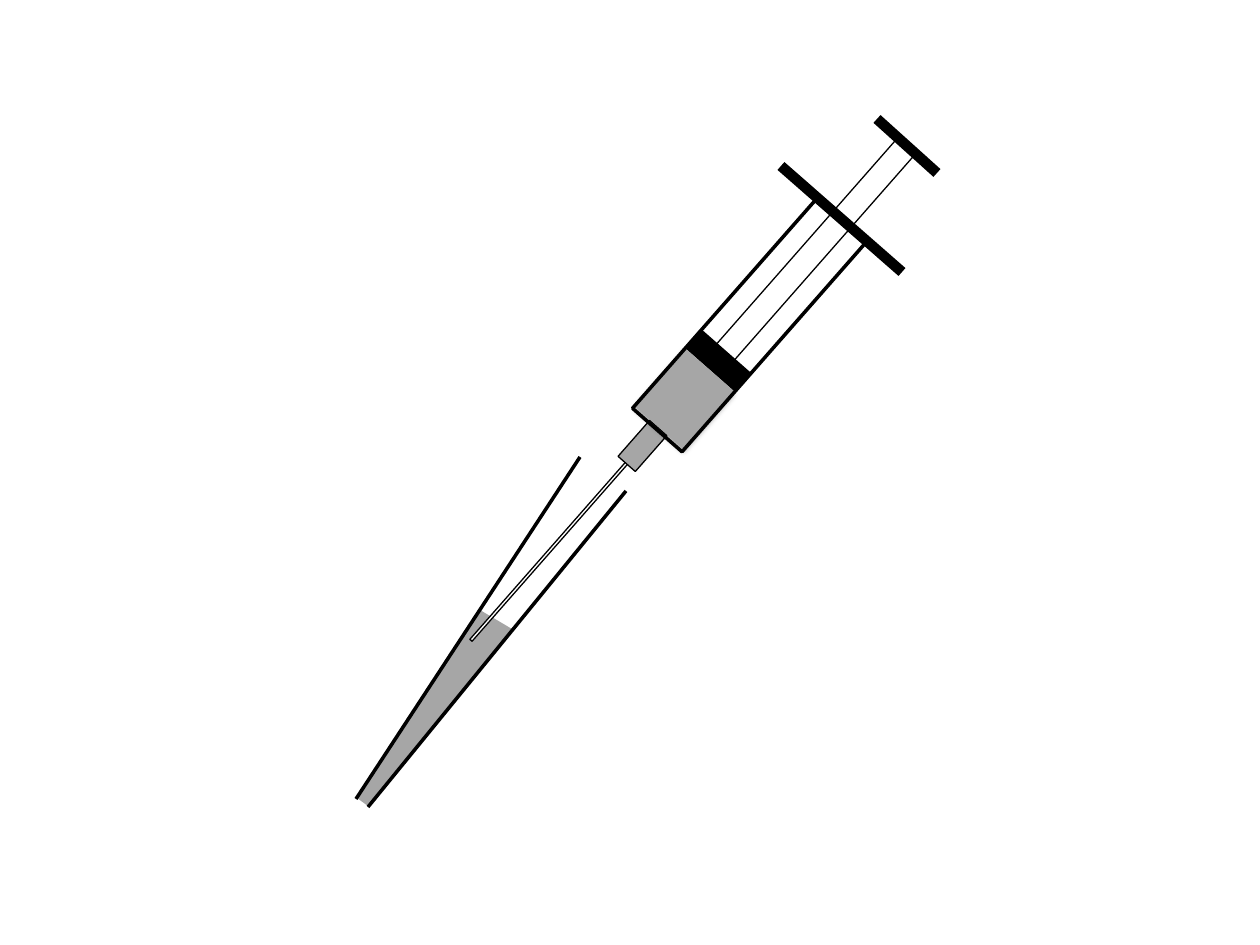
from lxml import etree
from pptx import Presentation
from pptx.dml.color import RGBColor
from pptx.enum.shapes import MSO_CONNECTOR, MSO_SHAPE
from pptx.oxml.ns import qn
from pptx.util import Emu, Pt

PX = 914400 / 126
BLACK = RGBColor(0x00, 0x00, 0x00)
WHITE = RGBColor(0xFF, 0xFF, 0xFF)
GREY = RGBColor(0xA6, 0xA6, 0xA6)
RECTANGLE = MSO_SHAPE.RECTANGLE
STRAIGHT = MSO_CONNECTOR.STRAIGHT
TILT = 41.3
THIN, MEDIUM, THICK = 0.75, 2, 6
BLANK_LAYOUT = 6


def px(value):
    return Emu(round(value * PX))


class Drawing:
    """Draws the parts of one object into a group on the page."""

    def __init__(self, page):
        self.shapes = page.shapes.add_group_shape().shapes

    def paint(self, shape, fill, line_width):
        shape.shadow.inherit = False
        if fill is None:
            shape.fill.background()
        else:
            shape.fill.solid()
            shape.fill.fore_color.rgb = fill
        if line_width:
            shape.line.color.rgb = BLACK
            shape.line.width = Pt(line_width)
        else:
            shape.line.fill.background()

    def box(self, left, top, width, height, fill=None, line_width=0):
        shape = self.shapes.add_shape(
            RECTANGLE, px(left), px(top), px(width), px(height))
        shape.rotation = TILT
        self.paint(shape, fill, line_width)
        return shape

    def outline(self, points, fill):
        builder = self.shapes.build_freeform(*points[0], scale=PX)
        builder.add_line_segments(points[1:], close=True)
        self.paint(builder.convert_to_shape(), fill, 0)

    def line(self, start, end, width):
        connector = self.shapes.add_connector(
            STRAIGHT, *map(px, start), *map(px, end))
        connector.line.color.rgb = BLACK
        connector.line.width = Pt(width)
        etree.SubElement(connector._element.spPr, qn("a:effectLst"))

    def soft_shadow(self, shape):
        effects = shape._element.spPr.find(qn("a:effectLst"))
        shadow = etree.SubElement(
            effects, qn("a:outerShdw"), blurRad=str(Pt(3.1)),
            dist=str(Pt(1.8)), dir="5400000", rotWithShape="0")
        color = etree.SubElement(shadow, qn("a:srgbClr"), val=str(BLACK))
        etree.SubElement(color, qn("a:alpha"), val="35000")


def draw_tube(page):
    tube = Drawing(page)
    # Liquid, then the two walls
    tube.outline([(357, 798), (368, 806), (512, 629), (480, 610)], GREY)
    tube.line((580, 457), (356, 799), MEDIUM)
    tube.line((626, 491), (368, 807), MEDIUM)


def draw_syringe(page):
    syringe = Drawing(page)
    # Needle, hub and plunger rod
    syringe.box(548, 432, 3, 238, WHITE, THIN)
    syringe.box(631, 422, 23, 48, GREY, THIN)
    syringe.box(798, 113, 24, 286, WHITE, THIN)
    # Finger flange and thumb rest
    syringe.line((781, 166), (902, 272), THICK)
    syringe.line((877, 119), (937, 173), THICK)
    # Stopper, liquid and barrel
    syringe.box(685, 348, 66, 25, BLACK)
    syringe.soft_shadow(syringe.box(651, 360, 66, 77, GREY))
    syringe.box(717, 184, 66, 281, line_width=MEDIUM)


def main():
    deck = Presentation()
    deck.slide_width, deck.slide_height = px(1260), px(945)
    page = deck.slides.add_slide(deck.slide_layouts[BLANK_LAYOUT])
    draw_tube(page)
    draw_syringe(page)
    deck.save("out.pptx")


if __name__ == "__main__":
    main()
